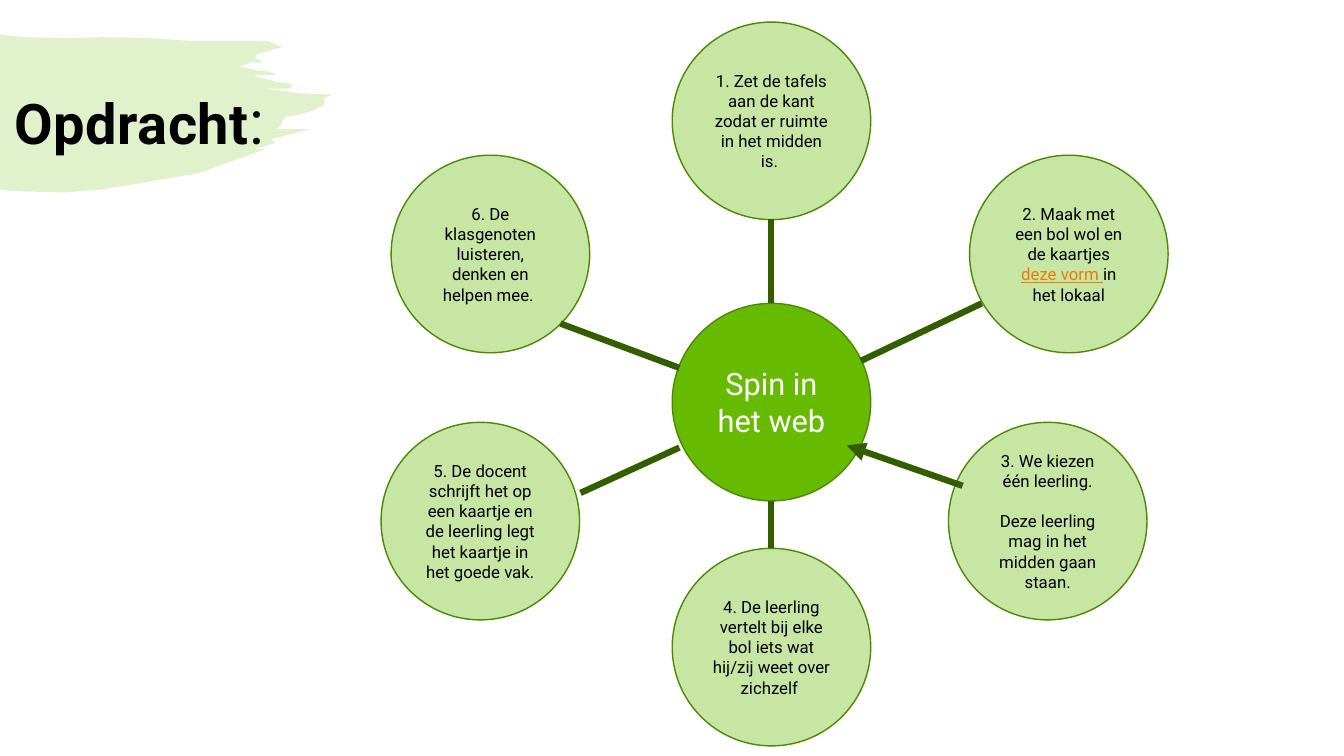
import dataclasses

import lxml.etree
import pptx
import pptx.dml.color
import pptx.enum.shapes
import pptx.enum.text
import pptx.oxml.ns
import pptx.util

Pt = pptx.util.Pt
qn = pptx.oxml.ns.qn


@dataclasses.dataclass(frozen=True)
class Theme:
    font: str = "Roboto"
    green: str = "66BB00"
    pale_green: str = "C7E6A4"
    outline: str = "4B8A00"
    dark_green: str = "335E00"
    orange: str = "EE7B08"
    black: str = "000000"
    white: str = "FFFFFF"
    step_size: float = 12
    hub_size: float = 22
    title_size: float = 40
    colon_size: float = 44


class WebSlide:
    """Holds the theme and the slide, and adds each kind of element."""

    def __init__(self, page, theme):
        self.page = page
        self.theme = theme

    def color(self, value):
        return pptx.dml.color.RGBColor.from_string(value)

    def style(self, font, size, color):
        font.name = self.theme.font
        font.size = Pt(size)
        font.color.rgb = self.color(color)

    def brush(self, points, opacity):
        start, *others = [(Pt(x), Pt(y)) for x, y in points]
        builder = self.page.shapes.build_freeform(*start)
        builder.add_line_segments(others, close=True)
        stroke = builder.convert_to_shape()
        stroke.shadow.inherit = False
        stroke.line.fill.background()
        stroke.fill.solid()
        stroke.fill.fore_color.rgb = self.color(self.theme.green)
        tint = stroke.fill._xPr.find(qn("a:solidFill"))[0]
        lxml.etree.SubElement(tint, qn("a:alpha"), val=str(opacity * 1000))

    def title(self, left, top, width, height, word, ending):
        box = self.page.shapes.add_textbox(Pt(left), Pt(top), Pt(width), Pt(height))
        box.text_frame.word_wrap = False
        box.text_frame.auto_size = pptx.enum.text.MSO_AUTO_SIZE.SHAPE_TO_FIT_TEXT
        para = box.text_frame.paragraphs[0]
        self.style(para.font, self.theme.title_size, self.theme.black)
        for text, size, bold in ((word, self.theme.title_size, True),
                                 (ending, self.theme.colon_size, False)):
            span = para.add_run()
            span.text = text
            self.style(span.font, size, self.theme.black)
            span.font.bold = bold
            if bold:
                span._r.get_or_add_rPr().set("spc", "30")

    def circle(self, left, top, paragraphs, fill, size, color):
        """Each paragraph is a list of (text, is_link) pairs."""
        ball = self.page.shapes.add_shape(
            pptx.enum.shapes.MSO_SHAPE.OVAL, Pt(left), Pt(top), Pt(141.8), Pt(141.1))
        ball.shadow.inherit = False
        ball.fill.solid()
        ball.fill.fore_color.rgb = self.color(fill)
        ball.line.color.rgb = self.color(self.theme.outline)
        ball.line.width = Pt(1)
        frame = ball.text_frame
        frame.word_wrap = True
        frame.vertical_anchor = pptx.enum.text.MSO_ANCHOR.MIDDLE
        for index, spans in enumerate(paragraphs):
            para = frame.add_paragraph() if index else frame.paragraphs[0]
            para.alignment = pptx.enum.text.PP_ALIGN.CENTER
            para.space_before = Pt(14.4 if index else 0)
            self.style(para.font, size, color)
            for text, is_link in spans:
                span = para.add_run()
                span.text = text
                if is_link:
                    span.font.color.rgb = self.color(self.theme.orange)
                    span.font.underline = True

    def thread(self, start, end, arrow=False):
        line = self.page.shapes.add_connector(
            pptx.enum.shapes.MSO_CONNECTOR.STRAIGHT, *map(Pt, start + end))
        line.line.color.rgb = self.color(self.theme.dark_green)
        line.line.width = Pt(4.5)
        if arrow:
            lxml.etree.SubElement(line.line._get_or_add_ln(), qn("a:tailEnd"), type="triangle")
        lxml.etree.SubElement(line._element.spPr, qn("a:effectLst"))


BRUSH = [
    # Upper edge
    (0, 24.5), (4.3, 25.2), (18, 26.6), (47.5, 27.4), (73.4, 26.6), (108.7, 27.4),
    (139.7, 29.5), (178.6, 29.5), (190.4, 29.2), (201.6, 33.8),
    # Ragged tip
    (195.1, 35.3), (183.6, 38.9), (182.2, 41), (184.3, 42.5), (188.6, 44.6),
    (179.7, 44.7), (171.4, 47.5), (177.1, 49), (184.3, 50.4), (191.5, 51.1),
    (198, 53.3), (180.7, 54), (189.4, 56.2), (196.6, 58.3), (201.6, 59),
    (207.4, 59.8), (208.8, 61.2), (206.6, 63.4), (204.5, 63.4), (189.4, 63.4),
    (213.1, 66.6), (237.6, 67.7), (231.1, 69.8), (231.8, 74.9), (229, 76.3),
    (221, 79.9), (216, 81.4), (203.8, 83.5), (201.6, 86.4), (200.2, 90),
    (197.3, 92.2), (221.8, 92.2), (193.7, 99.4), (196.6, 102.2), (181.4, 106.6),
    # Lower edge
    (189.4, 106.6), (141.8, 123.8), (73.4, 135.4), (46.8, 137.5), (16.6, 136.8),
    (5, 136.1), (0, 135.4),
]

STEPS = [
    (480.2, 15.8, [[("1. Zet de tafels aan de kant zodat er ruimte in het midden is. ", False)]]),
    (692.6, 110.9, [[("2. Maak met een bol wol en de kaartjes ", False),
                     ("deze vorm ", True), ("in het lokaal", False)]]),
    (677.5, 301.7, [[("3. We kiezen één leerling.", False)],
                    [("Deze leerling mag in het midden gaan staan.", False)]]),
    (480.2, 391.7, [[("4. De leerling vertelt bij elke bol iets wat hij/zij weet over zichzelf ",
                      False)]]),
    (272.2, 301.7, [[("5. De docent schrijft het op een kaartje en de leerling legt "
                      "het kaartje in het goede vak.", False)]]),
    (279.4, 110.9, [[("6. De klasgenoten luisteren, denken en helpen mee. ", False)]]),
]

THREADS = [
    ((550.8, 156.2), (550.8, 216.7)),
    ((701.3, 216.7), (614.9, 257.8)),
    ((550.8, 357.8), (550.8, 391.7)),
    ((485.3, 319.7), (414.7, 352.1)),
    ((400.3, 231.1), (485.3, 262.8)),
]


def main():
    deck = pptx.Presentation()
    deck.slide_width, deck.slide_height = Pt(960), Pt(540)
    theme = Theme()
    web = WebSlide(deck.slides.add_slide(deck.slide_layouts[6]), theme)

    # Title on its brush stroke
    web.brush(BRUSH, opacity=20)
    web.title(3.6, 55.4, 216.7, 60.5, "Opdracht", ":")

    # Hub and the six steps around it
    web.circle(480.2, 216.7, [[("Spin in het web", False)]],
               theme.green, theme.hub_size, theme.white)
    for left, top, paragraphs in STEPS:
        web.circle(left, top, paragraphs, theme.pale_green, theme.step_size, theme.black)

    # Threads, with an arrow from step 3 into the hub
    for start, end in THREADS:
        web.thread(start, end)
    web.thread((687.6, 347), (604.8, 318.2), arrow=True)

    deck.save("out.pptx")


if __name__ == "__main__":
    main()
